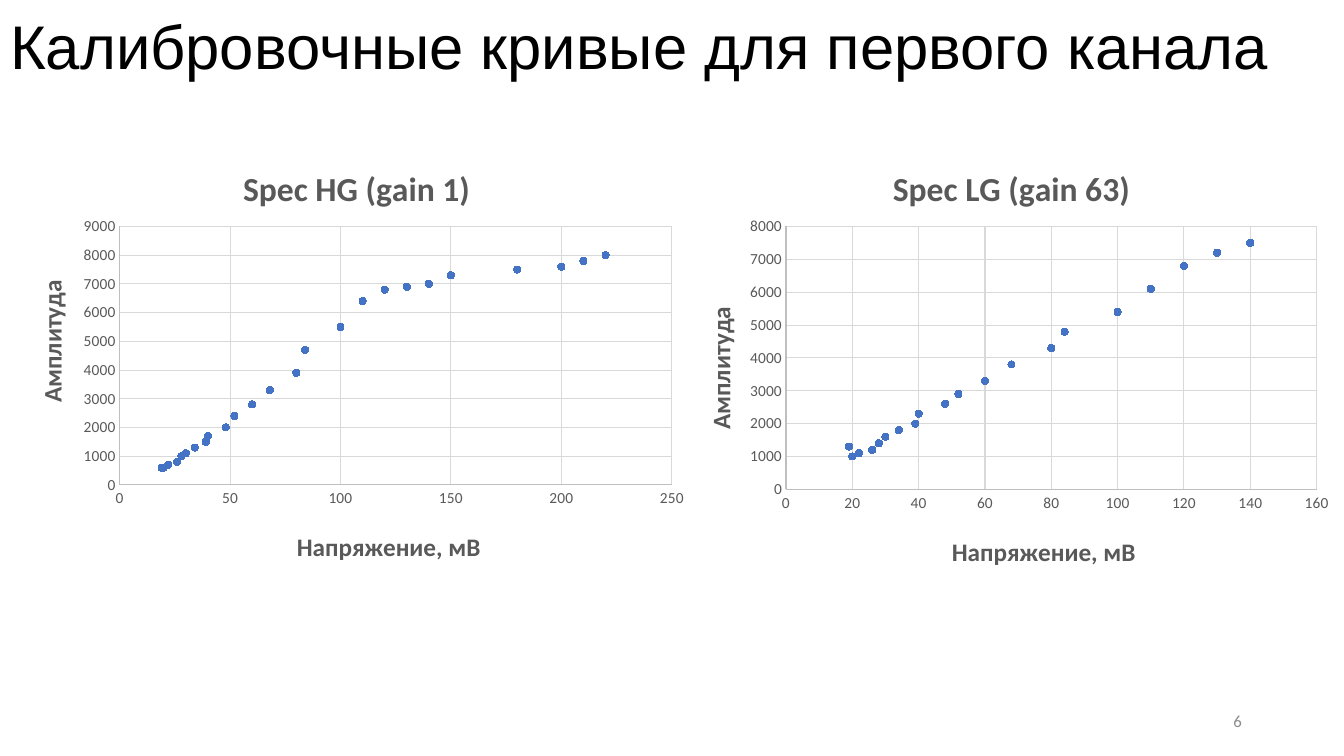
from pptx import Presentation
from pptx import util as u
from pptx.chart import data as cd
from pptx.dml.color import RGBColor
from pptx.enum import chart as ch, text
from pptx.oxml import ns, parse_xml

BLACK = RGBColor(0, 0, 0)
GRAY = RGBColor(0x59, 0x59, 0x59)
PALE = RGBColor(0x8C, 0x8C, 0x8C)
GRID = RGBColor(0xD9, 0xD9, 0xD9)
EDGE = RGBColor(0xBF, 0xBF, 0xBF)
BLUE = RGBColor(0x44, 0x72, 0xC4)

VOLTS = [19, 20, 22, 26, 28, 30, 34, 39, 40, 48, 52, 60, 68, 80, 84,
         100, 110, 120, 130, 140, 150, 180, 200, 210, 220]
HIGH = [600, 600, 700, 800, 1000, 1100, 1300, 1500, 1700, 2000, 2400, 2800,
        3300, 3900, 4700, 5500, 6400, 6800, 6900, 7000, 7300, 7500, 7600,
        7800, 8000]
LOW = [1300, 1000, 1100, 1200, 1400, 1600, 1800, 2000, 2300, 2600, 2900, 3300,
       3800, 4300, 4800, 5400, 6100, 6800, 7200, 7500]

CURVES = [
    {"name": "Spec HG (gain 1)", "vals": HIGH, "left": 0.23, "width": 17.4,
     "x": (250, 50), "y": (9000, 1000), "plot": (0.16, 0.21, 0.8, 0.58),
     "head": (0.33, 0.06), "foot": (0.41, 0.88), "side": (0.03, 0.32)},
    {"name": "Spec LG (gain 63)", "vals": LOW, "left": 16.93, "width": 16.93,
     "x": (160, 20), "y": (8000, 1000), "plot": (0.17, 0.21, 0.79, 0.59),
     "head": (0.32, 0.06), "foot": (0.41, 0.89), "side": (0.04, 0.38)},
]


def style(item, **vals):
    """Set each named attribute on an item."""
    for key, val in vals.items():
        setattr(item, key, val)


def ink(font, size, color, bold=False, name="Calibri"):
    """Format a font."""
    style(font, size=u.Pt(size), bold=bold, name=name)
    font.color.rgb = color


def stroke(line, color):
    """Draw a thin line in one colour."""
    line.color.rgb = color
    line.width = u.Pt(0.75)


def place(node, spot, index):
    """Give a chart part a fixed place in fractions of the chart."""
    old = node.find(ns.qn("c:layout"))
    if old is not None:
        node.remove(old)
    inner = '<c:layoutTarget val="inner"/>' if len(spot) == 4 else ""
    modes = "".join(f'<c:{k}Mode val="edge"/>' for k in "xy")
    sizes = "".join(f'<c:{k} val="{v}"/>' for k, v in zip("xywh", spot))
    node.insert(index, parse_xml(
        f'<c:layout {ns.nsdecls("c")}><c:manualLayout>{inner}{modes}{sizes}'
        '</c:manualLayout></c:layout>'))


def label(title, words, size, spot):
    """Write a chart or axis title."""
    frame = title.text_frame
    frame.text = words
    ink(frame.paragraphs[0].runs[0].font, size, GRAY, True)
    place(title._element, spot, 1)


def scale(axis, words, span, spot):
    """Format an axis with its title, grid and range."""
    top, step = span
    style(axis, minimum_scale=0, maximum_scale=top, major_unit=step,
          has_major_gridlines=True, has_title=True,
          major_tick_mark=ch.XL_TICK_MARK.NONE,
          minor_tick_mark=ch.XL_TICK_MARK.NONE)
    stroke(axis.major_gridlines.format.line, GRID)
    stroke(axis.format.line, EDGE)
    ink(axis.tick_labels.font, 11, GRAY)
    style(axis.tick_labels, number_format="General",
          number_format_is_linked=False)
    label(axis.axis_title, words, 18, spot)


def scatter(slide, curve):
    """Add one calibration chart."""
    data = cd.XyChartData()
    row = data.add_series("Series 1")
    for volt, val in zip(VOLTS, curve["vals"]):
        row.add_data_point(volt, val)
    chart = slide.shapes.add_chart(
        ch.XL_CHART_TYPE.XY_SCATTER, u.Cm(curve["left"]), u.Cm(3.35),
        u.Cm(curve["width"]), u.Cm(11.23), data).chart
    style(chart, has_legend=False, has_title=True)
    ink(chart.font, 10, BLACK)
    label(chart.chart_title, curve["name"], 24, curve["head"])
    scale(chart.category_axis, "Напряжение, мВ", curve["x"], curve["foot"])
    scale(chart.value_axis, "Амплитуда", curve["y"], curve["side"])
    place(chart._chartSpace.chart.plotArea, curve["plot"], 0)
    plot = chart.plots[0]
    plot.vary_by_categories = False
    dots = plot.series[0]
    dots.smooth = False
    dots.format.line.fill.background()
    style(dots.marker, style=ch.XL_MARKER_STYLE.CIRCLE, size=5)
    dots.marker.format.fill.solid()
    dots.marker.format.fill.fore_color.rgb = BLUE
    stroke(dots.marker.format.line, BLUE)


def write(shape, words, box, align, font):
    """Place a shape and fill it with one line of text."""
    for key, val in zip(("left", "top", "width", "height"), box):
        setattr(shape, key, u.Cm(val))
    frame = shape.text_frame
    style(frame, text=words, word_wrap=True, auto_size=text.MSO_AUTO_SIZE.NONE,
          vertical_anchor=text.MSO_ANCHOR.MIDDLE)
    para = frame.paragraphs[0]
    para.alignment = align
    ink(para.runs[0].font, **font)
    return para


def main():
    """Build the slide and save it."""
    deck = Presentation()
    style(deck, slide_width=u.Cm(33.87), slide_height=u.Cm(19.05))
    slide = deck.slides.add_slide(deck.slide_layouts[5])
    head = write(slide.shapes.title, "Калибровочные кривые для первого канала",
                 (0, 0, 33.87, 2.49), text.PP_ALIGN.LEFT,
                 {"size": 44, "color": BLACK, "name": "Arial"})
    head.line_spacing = 0.9
    write(slide.shapes.add_textbox(0, 0, 0, 0), "6",
          (23.93, 17.65, 7.62, 1.02), text.PP_ALIGN.RIGHT,
          {"size": 12, "color": PALE})
    for curve in CURVES:
        scatter(slide, curve)
    deck.save("out.pptx")


if __name__ == "__main__":
    main()
